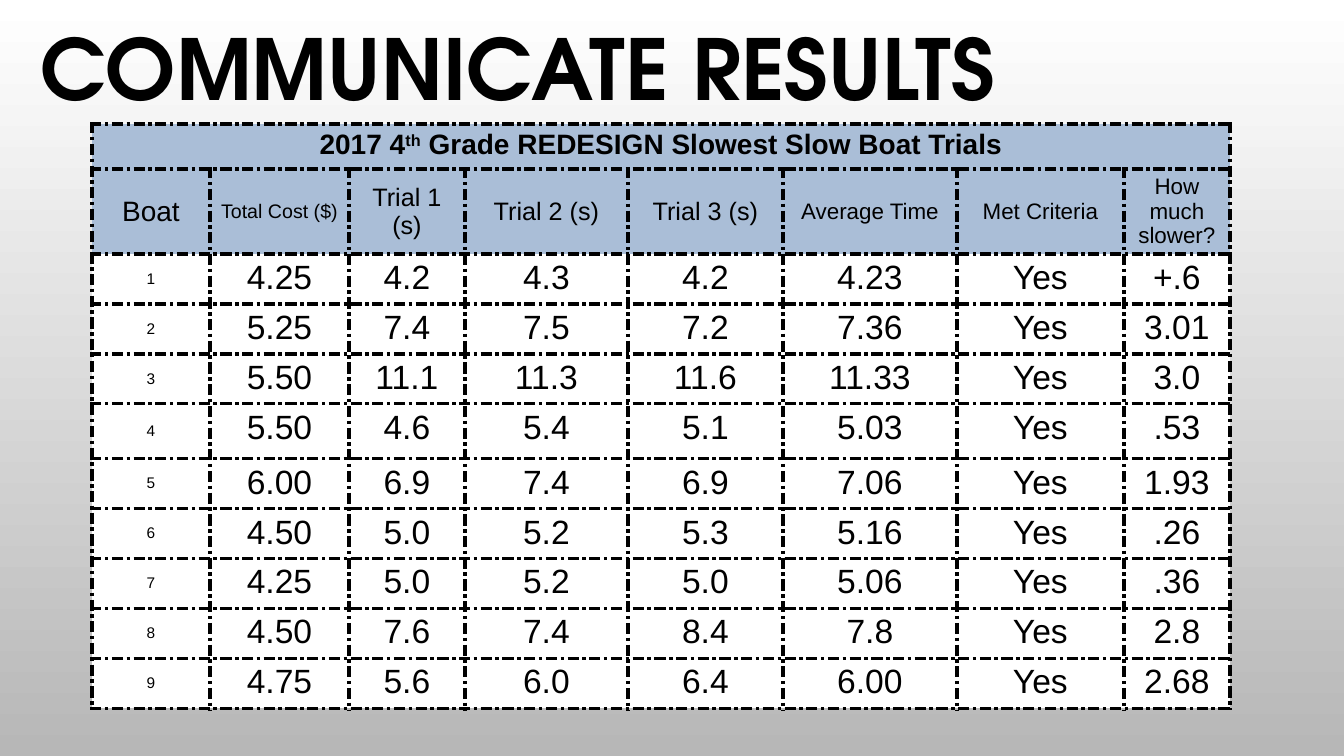
from lxml.etree import SubElement
from pptx import Presentation
from pptx.dml.color import RGBColor
from pptx.enum.text import MSO_ANCHOR, MSO_AUTO_SIZE, PP_ALIGN
from pptx.oxml import parse_xml
from pptx.oxml.ns import nsdecls, qn
from pptx.util import Pt

PX = 914400 / 100.8
COLORS = {"ink": "000000", "head": "AABED7", "cell": "FFFFFF",
          "light": "FFFFFF", "dark": "B7B7B7"}
WIDTHS = [118, 139, 116, 163, 155, 174, 167, 106]
HEIGHTS = [45, 84] + [50] * 3 + [55] + [50] * 5
CAPTION = [("2017 4", 0), ("th", 30000),
           (" Grade REDESIGN Slowest Slow Boat Trials", 0)]
HEADS = [("Boat", 20), ("Total Cost ($)", 14), ("Trial 1 (s)", 18),
         ("Trial 2 (s)", 18), ("Trial 3 (s)", 18), ("Average Time", 16),
         ("Met Criteria", 16), ("How much slower?", 16)]
TRIALS = [
    ("1", "4.25", "4.2", "4.3", "4.2", "4.23", "Yes", "+.6"),
    ("2", "5.25", "7.4", "7.5", "7.2", "7.36", "Yes", "3.01"),
    ("3", "5.50", "11.1", "11.3", "11.6", "11.33", "Yes", "3.0"),
    ("4", "5.50", "4.6", "5.4", "5.1", "5.03", "Yes", ".53"),
    ("5", "6.00", "6.9", "7.4", "6.9", "7.06", "Yes", "1.93"),
    ("6", "4.50", "5.0", "5.2", "5.3", "5.16", "Yes", ".26"),
    ("7", "4.25", "5.0", "5.2", "5.0", "5.06", "Yes", ".36"),
    ("8", "4.50", "7.6", "7.4", "8.4", "7.8", "Yes", "2.8"),
    ("9", "4.75", "5.6", "6.0", "6.4", "6.00", "Yes", "2.68"),
]


def px(n):
    return round(n * PX)


def color(name):
    return RGBColor.from_string(COLORS[name])


def style(run, size, face="Arial", bold=False):
    font = run.font
    font.name, font.size, font.bold = face, Pt(size), bold
    font.color.rgb = color("ink")


def shade(slide):
    """Fill the background with a gradient from top to bottom."""
    fill = slide.background.fill
    fill.gradient()
    fill.gradient_angle = 270
    for stop, name in zip(fill.gradient_stops, ("light", "dark")):
        stop.color.rgb = color(name)


def add_title(slide, text):
    title = slide.shapes.title
    title.left, title.top = px(30), 0
    title.width, title.height = px(1159), px(146)
    frame = title.text_frame
    frame.text = text
    frame.word_wrap = True
    frame.auto_size = MSO_AUTO_SIZE.NONE
    frame.vertical_anchor = MSO_ANCHOR.MIDDLE
    para = frame.paragraphs[0]
    para.alignment = PP_ALIGN.LEFT
    para.line_spacing = 0.9
    style(para.runs[0], 60, "TeX Gyre Adventor", True)


def edge(cell):
    """Draw dash-dot borders on all four sides of a cell."""
    props = cell._tc.get_or_add_tcPr()
    for i, side in enumerate("LRTB"):
        line = parse_xml(f'<a:ln{side} {nsdecls("a")} w="{Pt(3)}"/>')
        fill = SubElement(line, qn("a:solidFill"))
        SubElement(fill, qn("a:srgbClr"), val=COLORS["ink"])
        SubElement(line, qn("a:prstDash"), val="dashDot")
        props.insert(i, line)


def paint(cell, name):
    cell.fill.solid()
    cell.fill.fore_color.rgb = color(name)
    edge(cell)


def write(cell, text, size, anchor=MSO_ANCHOR.MIDDLE):
    cell.text_frame.text = text
    cell.vertical_anchor = anchor
    para = cell.text_frame.paragraphs[0]
    para.alignment = PP_ALIGN.CENTER
    style(para.runs[0], size)


def add_caption(table):
    cell = table.cell(0, 0)
    cell.merge(table.cell(0, len(WIDTHS) - 1))
    para = cell.text_frame.paragraphs[0]
    para.alignment = PP_ALIGN.CENTER
    for text, base in CAPTION:
        run = para.add_run()
        run.text = text
        style(run, 20, bold=True)
        if base:
            run._r.get_or_add_rPr().set("baseline", str(base))


def add_trials(slide):
    table = slide.shapes.add_table(
        len(HEIGHTS), len(WIDTHS), px(92), px(124),
        px(sum(WIDTHS)), px(sum(HEIGHTS))).table
    for col, width in zip(table.columns, WIDTHS):
        col.width = px(width)
    for i, (row, height) in enumerate(zip(table.rows, HEIGHTS)):
        row.height = px(height)
        for cell in row.cells:
            paint(cell, "head" if i < 2 else "cell")
    add_caption(table)
    for c, (text, size) in enumerate(HEADS):
        write(table.cell(1, c), text, size)
    for r, trial in enumerate(TRIALS, 2):
        boat, *values = trial
        write(table.cell(r, 0), boat, 11)
        for c, value in enumerate(values, 1):
            write(table.cell(r, c), value, 24, MSO_ANCHOR.TOP)


def main():
    deck = Presentation()
    deck.slide_width, deck.slide_height = px(1344), px(756)
    slide = deck.slides.add_slide(deck.slide_layouts[5])
    shade(slide)
    add_title(slide, "COMMUNICATE RESULTS")
    add_trials(slide)
    deck.save("out.pptx")


if __name__ == "__main__":
    main()
